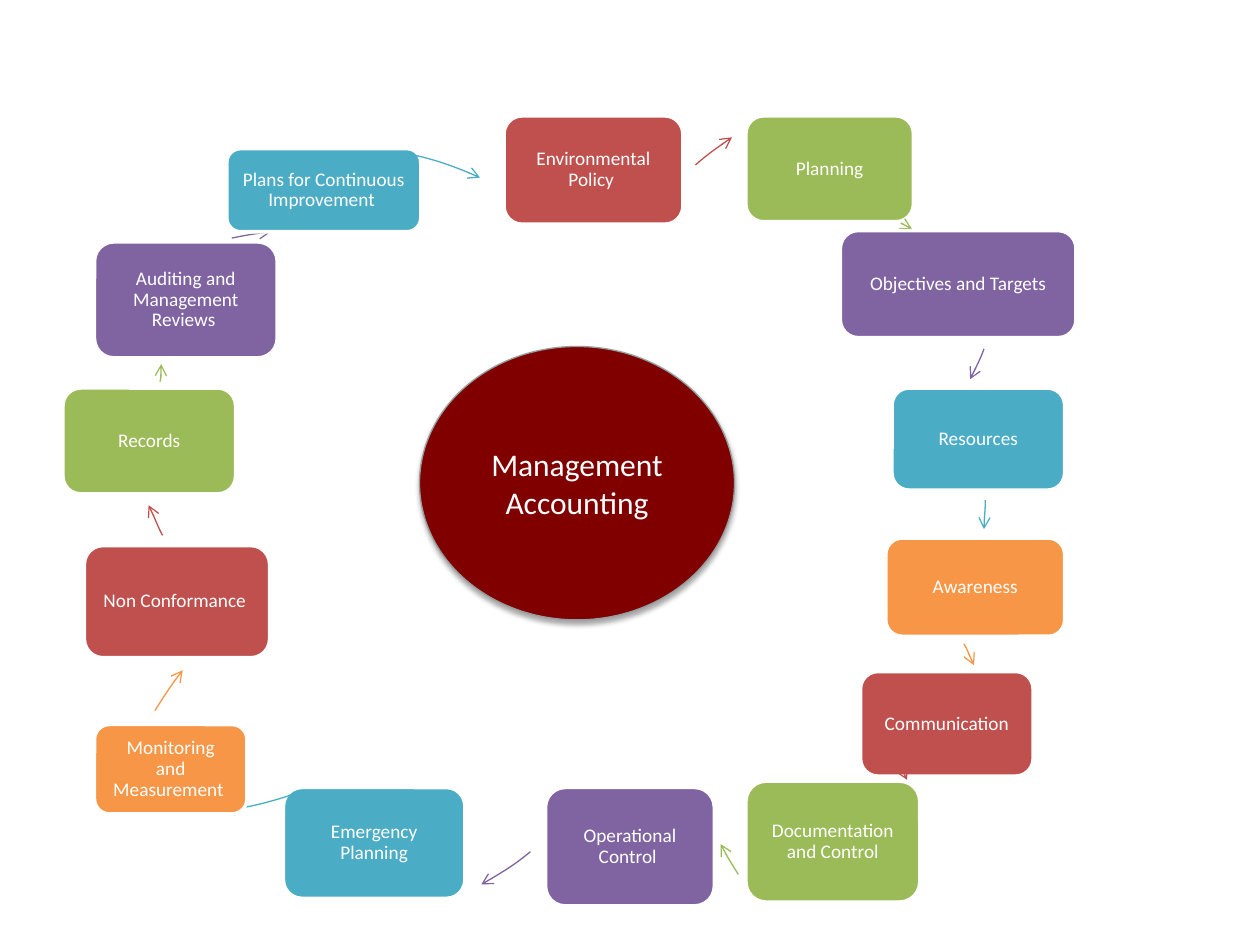
from dataclasses import dataclass
from itertools import cycle

from pptx import Presentation
from pptx.dml.color import RGBColor
from pptx.enum.shapes import MSO_SHAPE as Kind
from pptx.enum.text import MSO_ANCHOR as Anchor, PP_ALIGN as Align
from pptx.oxml import parse_xml
from pptx.oxml.ns import nsdecls
from pptx.oxml.xmlchemy import OxmlElement as Node
from pptx.util import Inches, Pt

COLS, ROWS = 1000, 750
WIDE, HIGH = Inches(10), Inches(7.5)
CELL = WIDE // COLS
RING = 577
FONT = "Calibri"
WHITE = "FFFFFF"
HUES = ("C0504D", "9BBB59", "8064A2", "4BACC6", "F79646")

Spot = tuple[int, int]
Area = tuple[int, int, int, int]


@dataclass
class Step:
    text: str
    area: Area
    ring: Spot
    curve: tuple[Spot, Spot, Spot, Spot]


STEPS = (
    Step("Environmental Policy ", (400, 92, 142, 86), (448, 64),
         ((552, 131), (561, 123), (571, 116), (581, 109))),
    Step("Planning", (592, 92, 133, 84), (295, 145),
         ((715, 177), (718, 179), (721, 180), (724, 182))),
    Step("Objectives and Targets", (667, 183, 187, 85), (223, -114),
         ((781, 277), (778, 285), (774, 293), (770, 301))),
    Step("Resources", (708, 308, 137, 81), (205, 108),
         ((782, 397), (782, 405), (781, 412), (781, 420))),
    Step("Awareness", (703, 427, 142, 78), (219, 352),
         ((765, 511), (768, 516), (770, 522), (773, 528))),
    Step("Communication", (683, 533, 137, 83), (147, 378),
         ((719, 617), (719, 618), (720, 619), (720, 619))),
    Step("Documentation and Control", (592, 620, 138, 96), (536, 243),
         ((586, 694), (581, 686), (576, 678), (572, 670))),
    Step("Operational Control ", (433, 625, 134, 94), (-47, 162),
         ((421, 676), (409, 686), (396, 694), (382, 702))),
    Step("Emergency Planning", (225, 625, 144, 88), (-149, 69),
         ((231, 631), (213, 637), (195, 641), (177, 644))),
    Step("Monitoring and Measurement ", (75, 575, 121, 71), (84, 421),
         ((123, 564), (130, 553), (137, 542), (145, 532))),
    Step("Non Conformance ", (67, 433, 147, 89), (99, 9),
         ((129, 425), (125, 417), (122, 409), (118, 401))),
    Step("Records", (50, 308, 137, 84), (127, 31),
         ((127, 303), (128, 299), (128, 294), (128, 289))),
    Step("Auditing and Management Reviews ", (75, 192, 145, 92), (-44, 183),
         ((184, 189), (194, 187), (205, 185), (215, 184))),
    Step("Plans for Continuous Improvement ", (180, 118, 154, 66), (-26, 116),
         ((318, 121), (340, 125), (361, 132), (381, 141))),
)


def paint(color, code: str) -> None:
    color.rgb = RGBColor.from_string(code)


def stroke(shape, code: str, width: float) -> None:
    paint(shape.line.color, code)
    shape.line.width = Pt(width)


def block(slide, kind: Kind, area: Area, fill: str, edge: str, width: float,
          text: str, size: int, inset: float):
    shape = slide.shapes.add_shape(kind, *(n * CELL for n in area))
    shape.shadow.inherit = False
    shape.fill.solid()
    paint(shape.fill.fore_color, fill)
    stroke(shape, edge, width)
    frame = shape.text_frame
    frame.text = text
    frame.word_wrap = True
    frame.vertical_anchor = Anchor.MIDDLE
    frame.margin_left = frame.margin_right = Inches(inset)
    frame.margin_top = frame.margin_bottom = Inches(0.05)
    para = frame.paragraphs[0]
    para.alignment = Align.CENTER
    font = para.runs[0].font
    font.name, font.size = FONT, Pt(size)
    paint(font.color, WHITE)
    return shape


def arrow(slide, ring: Spot, spots: tuple[Spot, ...], hue: str) -> None:
    pen = slide.shapes.build_freeform(*spots[0], scale=CELL)
    pen.add_line_segments(spots[1:], close=False)
    shape = pen.convert_to_shape()
    shape.shadow.inherit = False
    shape.fill.background()
    stroke(shape, hue, 0.75)
    shape.left, shape.top = (n * CELL for n in ring)
    shape.width = shape.height = RING * CELL
    track = shape.element.xpath(".//a:path")[0]
    track.set("w", str(RING))
    track.set("h", str(RING))
    for point, (x, y) in zip(track.xpath(".//a:pt"), spots):
        point.set("x", str(x - ring[0]))
        point.set("y", str(y - ring[1]))
    lines = track.xpath("./a:lnTo")
    bend = Node("a:cubicBezTo")
    lines[0].addprevious(bend)
    for line in lines:
        bend.append(line[0])
        track.remove(line)
    tip = Node("a:tailEnd")
    tip.set("type", "arrow")
    shape.element.xpath(".//a:ln")[0].append(tip)


def shade(shape) -> None:
    glow = parse_xml(
        f'<a:outerShdw {nsdecls("a")} blurRad="{Pt(3.1)}" dist="{Pt(1.8)}" '
        'dir="5400000" rotWithShape="0"><a:srgbClr val="000000">'
        '<a:alpha val="35000"/></a:srgbClr></a:outerShdw>')
    shape.element.xpath(".//a:effectLst")[0].append(glow)


def main() -> None:
    deck = Presentation()
    deck.slide_width, deck.slide_height = WIDE, HIGH
    slide = deck.slides.add_slide(deck.slide_layouts[6])
    for step, hue in zip(STEPS, cycle(HUES)):
        box = block(slide, Kind.ROUNDED_RECTANGLE, step.area, hue, WHITE, 2,
                    step.text, 11, 0.09)
        box.text_frame.paragraphs[0].line_spacing = 0.9
        arrow(slide, step.ring, step.curve, hue)
    hub = block(slide, Kind.OVAL, (333, 275, 250, 217), "800000", "959F9F",
                0.75, "Management Accounting", 18, 0.1)
    shade(hub)
    deck.save("out.pptx")


if __name__ == "__main__":
    main()
